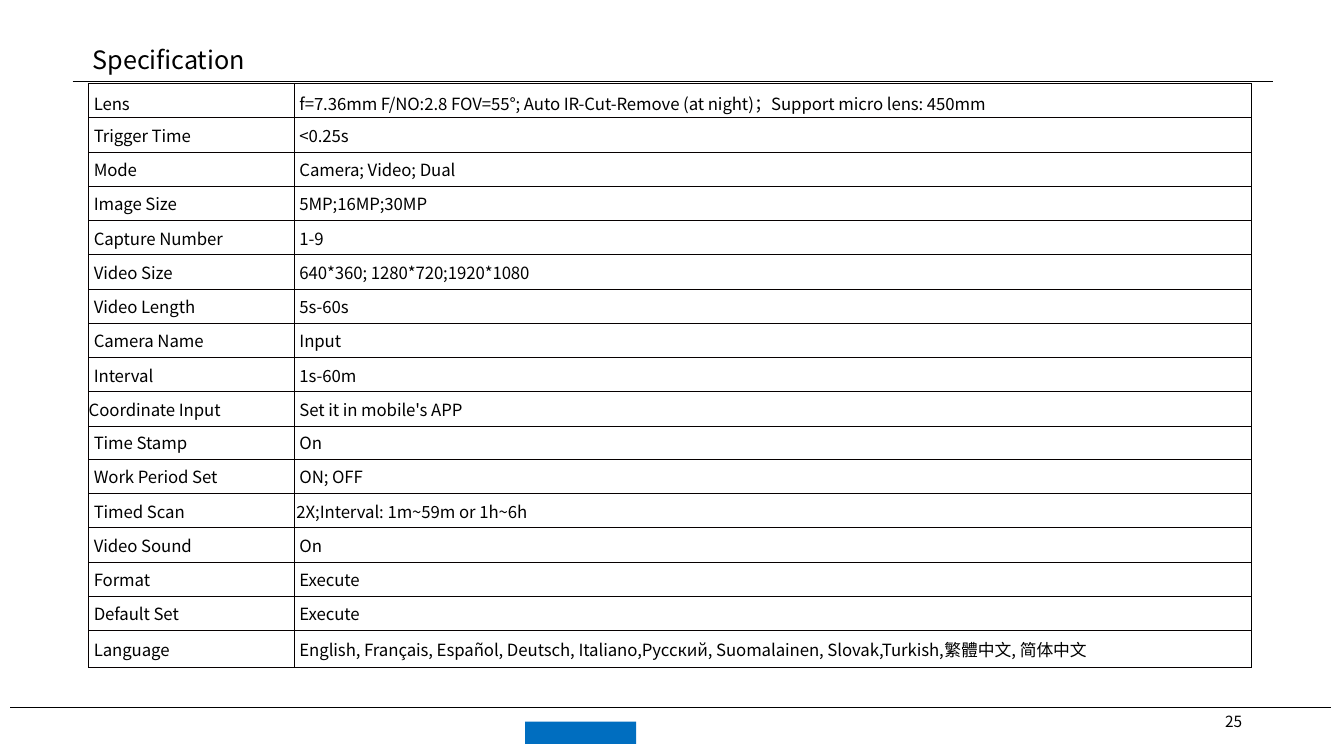
from lxml.etree import SubElement
from pptx import Presentation
from pptx.dml.color import RGBColor
from pptx.enum.shapes import MSO_CONNECTOR, MSO_SHAPE
from pptx.oxml.ns import qn
from pptx.util import Inches, Pt

FONT = "Noto Sans CJK SC"
BLACK = RGBColor(0x00, 0x00, 0x00)
GRID = RGBColor(0x06, 0x00, 0x00)
BLUE = RGBColor(0x00, 0x6E, 0xC0)

SPECS = [
    ("Lens", "f=7.36mm F/NO:2.8 FOV=55°; Auto IR-Cut-Remove (at night)；Support micro lens: 450mm"),
    ("Trigger Time", "<0.25s"),
    ("Mode", "Camera; Video; Dual"),
    ("Image Size", "5MP;16MP;30MP"),
    ("Capture Number", "1-9"),
    ("Video Size", "640*360; 1280*720;1920*1080"),
    ("Video Length", "5s-60s"),
    ("Camera Name", "Input"),
    ("Interval", "1s-60m"),
    ("Coordinate Input", "Set it in mobile's APP"),
    ("Time Stamp", "On"),
    ("Work Period Set", "ON; OFF"),
    ("Timed Scan", "2X;Interval: 1m~59m or 1h~6h"),
    ("Video Sound", "On"),
    ("Format", "Execute"),
    ("Default Set", "Execute"),
    ("Language", "English, Français, Español, Deutsch, Italiano,Pусский, Suomalainen, "
                 "Slovak,Turkish,繁體中文, 简体中文"),
]
COLUMN_WIDTHS = (2.04, 9.49)
ROW_HEIGHT = 0.34
ROW_HEIGHTS = {"Time Stamp": 0.33, "Language": 0.37}
SPACE_BEFORE = 3.6
SPACES_BEFORE = {"Lens": 4.7, "Time Stamp": 3.2, "Language": 4.5}
INDENT = 0.05
INDENTS = {("Coordinate Input", 0): 0, ("Timed Scan", 1): 0.02}


def format_run(r, size, tracking=-5):
    """Tracking is in hundredths of a point."""
    r.font.size = Pt(size)
    r.font.name = FONT
    r.font.color.rgb = BLACK
    r_pr = r._r.get_or_add_rPr()
    r_pr.set("spc", str(tracking))
    SubElement(r_pr, qn("a:ea")).set("typeface", FONT)


def format_paragraph(p, indent, space_before):
    p._p.get_or_add_pPr().set("marL", str(Inches(indent)))
    p.space_before = Pt(space_before)


def add_rule(slide, x1, x2, y):
    line = slide.shapes.add_connector(
        MSO_CONNECTOR.STRAIGHT, Inches(x1), Inches(y), Inches(x2), Inches(y))
    line.line.color.rgb = BLACK
    line.line.width = Pt(0.6)
    SubElement(line._element.spPr, qn("a:effectLst"))


def add_text(slide, box, text, size, top_inset, indent, space_before, tracking=-5):
    tf = slide.shapes.add_textbox(*map(Inches, box)).text_frame
    tf.word_wrap = True
    tf.margin_left = tf.margin_right = tf.margin_bottom = 0
    tf.margin_top = Inches(top_inset)
    p = tf.paragraphs[0]
    p.text = text
    format_paragraph(p, indent, space_before)
    format_run(p.runs[0], size, tracking)


def add_borders(cell, right_color, right_width):
    tc_pr = cell._tc.get_or_add_tcPr()
    for side in ("lnL", "lnR", "lnT", "lnB"):
        color, width = (right_color, right_width) if side == "lnR" else (GRID, 1)
        ln = SubElement(tc_pr, qn(f"a:{side}"), w=str(Pt(width)))
        SubElement(SubElement(ln, qn("a:solidFill")), qn("a:srgbClr"), val=str(color))


def fill_cell(cell, text, indent, space_before):
    cell.margin_left = cell.margin_right = cell.margin_bottom = 0
    cell.margin_top = Inches(round(space_before / 72, 2))
    p = cell.text_frame.paragraphs[0]
    p.text = text
    format_paragraph(p, indent, space_before)
    format_run(p.runs[0], 12)


def add_spec_table(slide):
    table = slide.shapes.add_table(
        len(SPECS), 2, Inches(0.88), Inches(0.83),
        Inches(sum(COLUMN_WIDTHS)), Inches(ROW_HEIGHT * len(SPECS))).table
    table.first_row = table.horz_banding = False
    for column, width in zip(table.columns, COLUMN_WIDTHS):
        column.width = Inches(width)
    for row, spec in zip(table.rows, SPECS):
        label = spec[0]
        row.height = Inches(ROW_HEIGHTS.get(label, ROW_HEIGHT))
        for i, (cell, text) in enumerate(zip(row.cells, spec)):
            fill_cell(cell, text, INDENTS.get((label, i), INDENT),
                      SPACES_BEFORE.get(label, SPACE_BEFORE))
            add_borders(cell, *((BLACK, 0.75) if i else (GRID, 1)))
            cell.fill.background()


def add_footer_block(slide):
    sp = slide.shapes.add_shape(
        MSO_SHAPE.RECTANGLE, Inches(5.21), Inches(7.16), Inches(1.1), Inches(0.22))
    sp.shadow.inherit = False
    sp.fill.solid()
    sp.fill.fore_color.rgb = BLUE
    sp.line.fill.background()


def main():
    prs = Presentation()
    prs.slide_width, prs.slide_height = Inches(13.33), Inches(7.5)
    slide = prs.slides.add_slide(prs.slide_layouts[6])
    add_rule(slide, 0.72, 12.63, 0.81)
    add_text(slide, (0.91, 0.43, 1.7, 0.33), "Specification", 18, 0.01, 0.01, 1)
    add_rule(slide, 0.1, 13.2, 7.02)
    add_spec_table(slide)
    add_text(slide, (12.12, 7.02, 0.25, 0.22), "25", 11, 0.04, 0.03, 2.8, tracking=0)
    add_footer_block(slide)
    prs.save("out.pptx")


if __name__ == "__main__":
    main()
